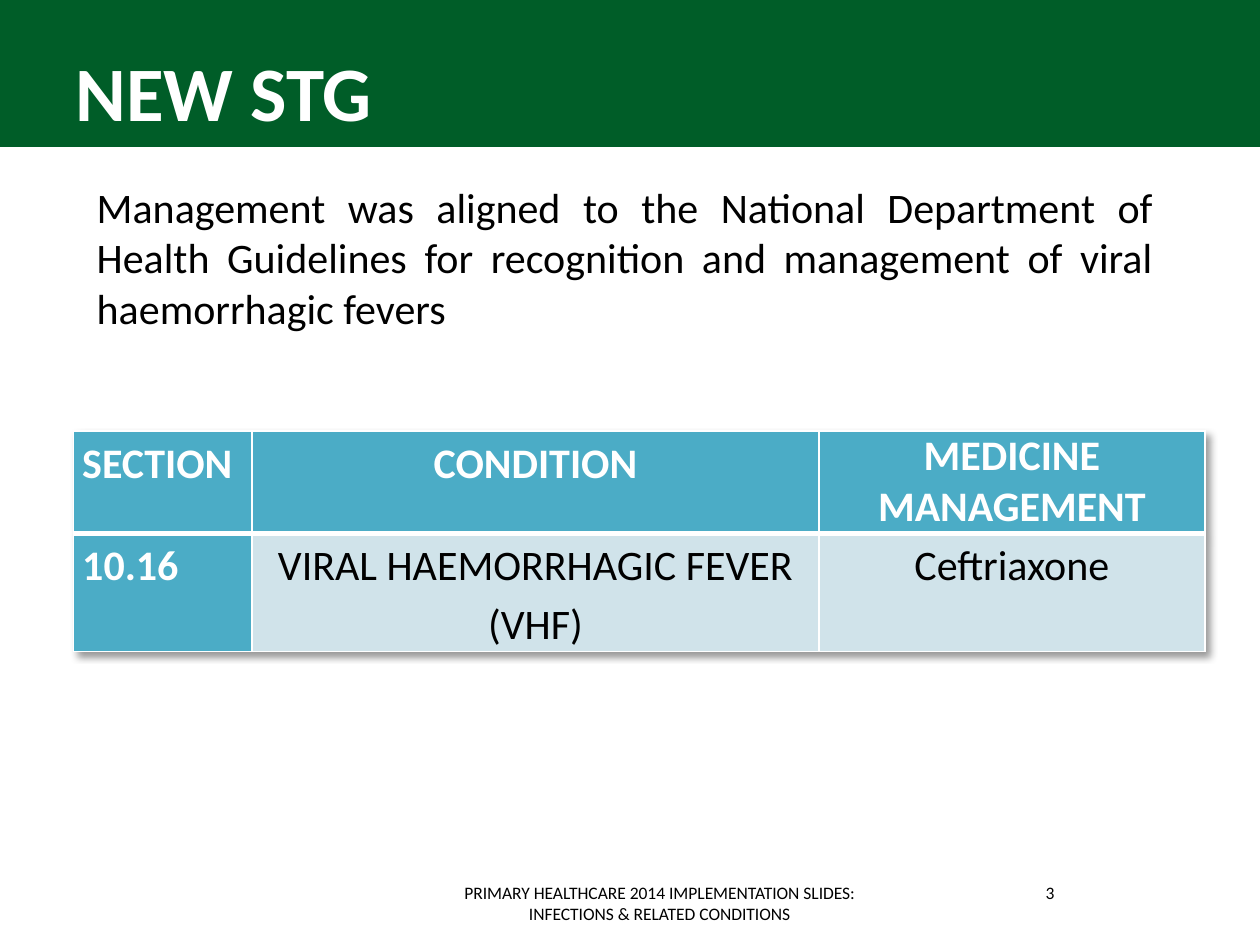
import pptx
import pptx.dml.color
import pptx.enum.shapes
import pptx.enum.text
import pptx.oxml
import pptx.oxml.ns
import pptx.util

Pt = pptx.util.Pt
RGB = pptx.dml.color.RGBColor.from_string
ALIGN = pptx.enum.text.PP_ALIGN
TOP = pptx.enum.text.MSO_ANCHOR.TOP
NS = pptx.oxml.ns.nsdecls("a")

THEME = {
    "font": "Calibri",
    "green": "005D28", "teal": "4BACC6", "pale": "D0E3EA",
    "white": "FFFFFF", "black": "000000",
    "title": 44, "body": 24, "footer": 10,
}


def add_text(tf, text, size, color, align, bold=False, spacing=None):
    tf.word_wrap = True
    tf.vertical_anchor = TOP
    p = tf.paragraphs[0]
    p.alignment = align
    if spacing:
        p.line_spacing = spacing
    r = p.add_run()
    r.text = text
    r.font.name = THEME["font"]
    r.font.size = Pt(THEME[size])
    r.font.bold = bold
    r.font.color.rgb = RGB(THEME[color])


def add_border(cell, side, width):
    cell._tc.get_or_add_tcPr().append(pptx.oxml.parse_xml(
        f'<a:{side} {NS} w="{Pt(width)}"><a:solidFill>'
        f'<a:srgbClr val="{THEME["white"]}"/></a:solidFill></a:{side}>'))


prs = pptx.Presentation()
prs.slide_width, prs.slide_height = Pt(720), Pt(540)
s = prs.slides.add_slide(prs.slide_layouts[5])

# Green band, placed behind the title
band = s.shapes.add_shape(pptx.enum.shapes.MSO_SHAPE.RECTANGLE,
                          0, 0, Pt(720), Pt(84))
band.shadow.inherit = False
band.fill.solid()
band.fill.fore_color.rgb = RGB(THEME["green"])
band.line.fill.background()
s.shapes._spTree.insert(2, band._element)

# Title
title = s.shapes.title
title.left, title.top, title.width, title.height = Pt(36), Pt(21.6), Pt(648), Pt(90)
add_text(title.text_frame, "NEW STG", "title", "white", ALIGN.LEFT, bold=True)

# Table: header row and first column are teal with bold white text
rows = [
    ["SECTION", "CONDITION", "MEDICINE MANAGEMENT"],
    ["10.16", "VIRAL HAEMORRHAGIC FEVER (VHF)", "Ceftriaxone"],
]
widths, heights = [102, 324, 220.5], [58.3, 67.4]
frame = s.shapes.add_table(2, 3, Pt(42), Pt(246.2), Pt(sum(widths)), Pt(sum(heights)))
table = frame.table
for column, width in zip(table.columns, widths):
    column.width = Pt(width)
for row, height in zip(table.rows, heights):
    row.height = Pt(height)
for i, texts in enumerate(rows):
    for j, text in enumerate(texts):
        cell = table.cell(i, j)
        heading = i == 0 or j == 0
        cell.margin_left = cell.margin_right = Pt(5)
        cell.margin_top = cell.margin_bottom = 0
        add_text(cell.text_frame, text, "body", "white" if heading else "black",
                 ALIGN.JUSTIFY if j == 0 else ALIGN.CENTER, bold=heading,
                 spacing=None if (i, j) == (0, 2) else 1.15)
        for side, width in (("lnL", 1), ("lnR", 1),
                            ("lnT", 3 if i == 1 else 1),
                            ("lnB", 3 if i == 0 else 1)):
            add_border(cell, side, width)
        cell.fill.solid()
        cell.fill.fore_color.rgb = RGB(THEME["teal" if heading else "pale"])

# Soft shadow below and to the right of the table
table._tbl.tblPr.insert(0, pptx.oxml.parse_xml(
    f'<a:effectLst {NS}><a:outerShdw blurRad="{Pt(4)}" dist="{Pt(3)}" dir="2700000" '
    f'algn="tl" rotWithShape="0"><a:srgbClr val="{THEME["black"]}">'
    '<a:alpha val="40000"/></a:srgbClr></a:outerShdw></a:effectLst>'))

# Body text, footer and slide number
for text, size, align, box in (
    ("Management was aligned to the National Department of Health Guidelines for "
     "recognition and management of viral haemorrhagic fevers",
     "body", ALIGN.JUSTIFY, (48.2, 100.1, 617.8, 94.3)),
    ("PRIMARY HEALTHCARE 2014 IMPLEMENTATION SLIDES: INFECTIONS & RELATED CONDITIONS",
     "footer", ALIGN.CENTER, (246.2, 500.4, 261.4, 28.8)),
    ("3", "footer", ALIGN.CENTER, (516.2, 500.4, 167.8, 28.8)),
):
    sp = s.shapes.add_textbox(*map(Pt, box))
    add_text(sp.text_frame, text, size, "black", align)

prs.save("out.pptx")
